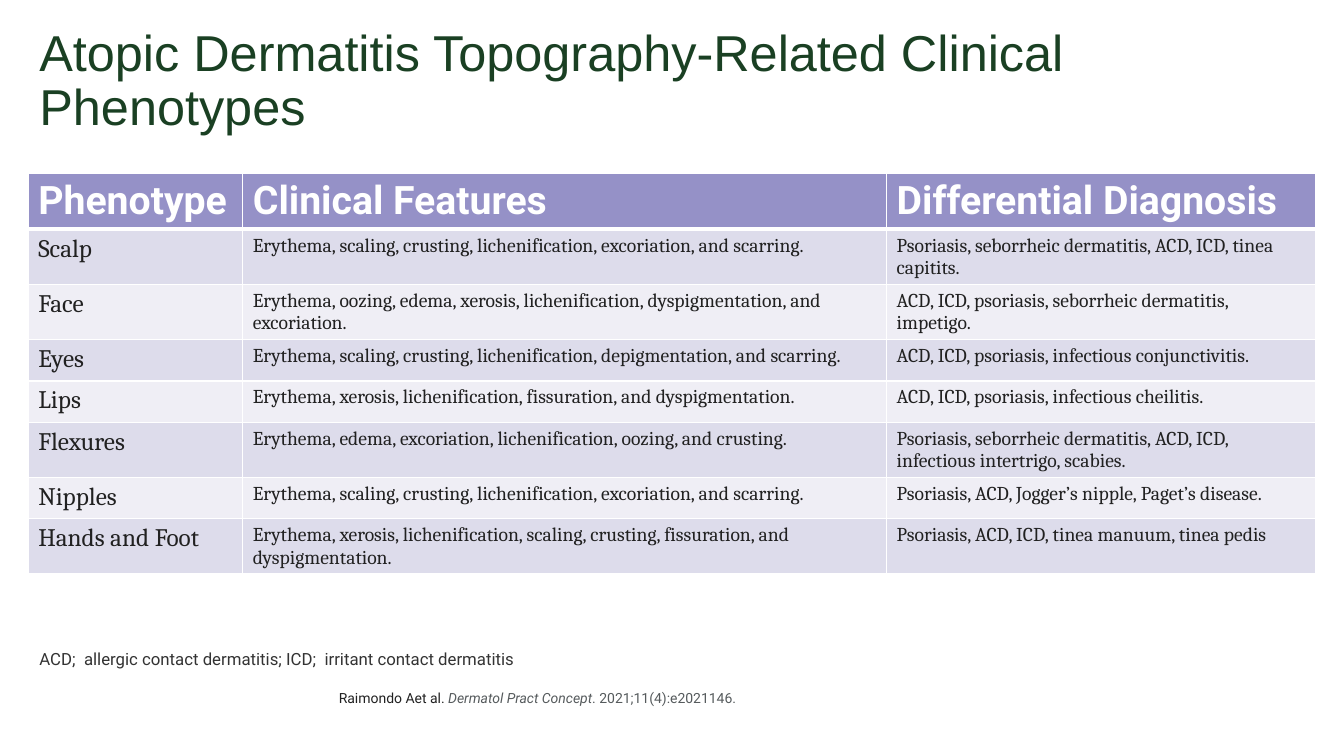
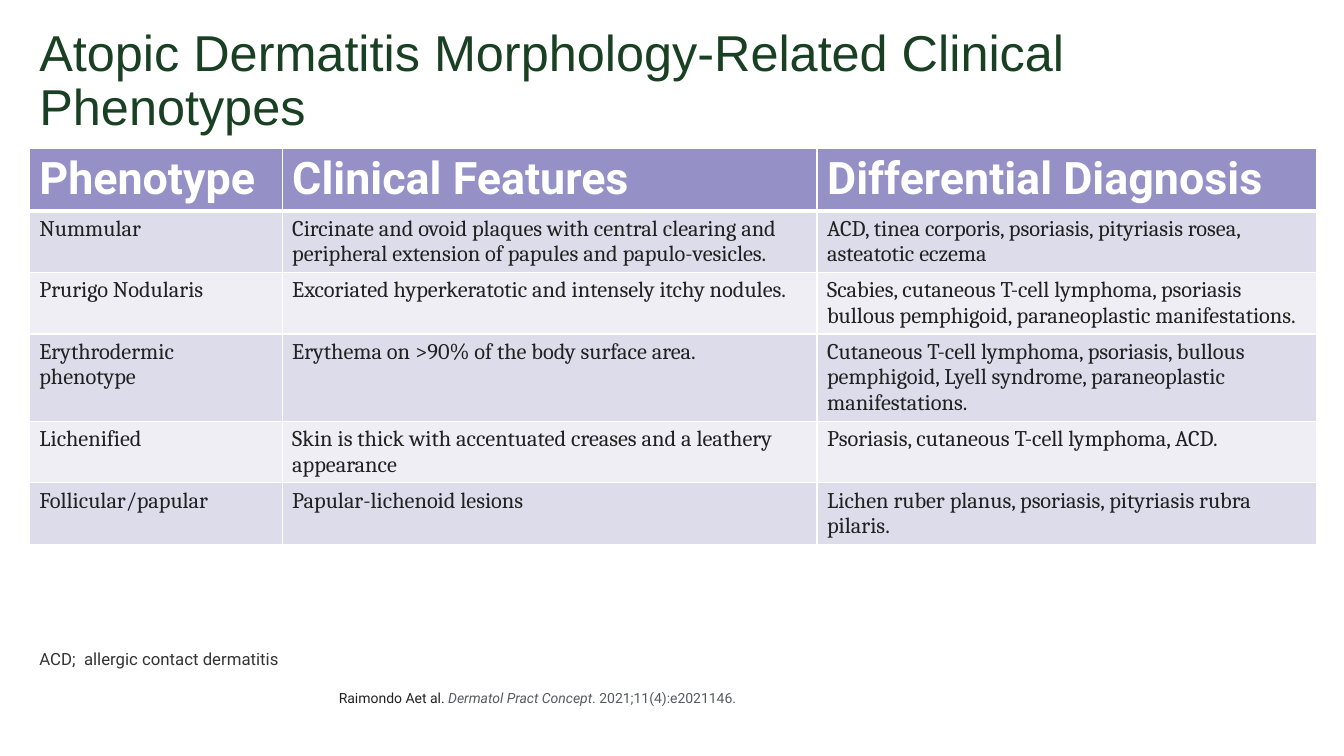
from collections import namedtuple

from lxml.etree import SubElement
from pptx import Presentation
from pptx.dml.color import RGBColor
from pptx.enum.text import MSO_ANCHOR as Anchor, MSO_AUTO_SIZE as AutoSize, PP_ALIGN as Align
from pptx.oxml.ns import qn
from pptx.util import Inches, Pt

COLORS = {
    "title": "1A4023", "ink": "212121", "note": "333333", "journal": "565B5D",
    "header": "9591C7", "band_dark": "DDDCEB", "band_light": "EFEEF5", "white": "FFFFFF",
}
Box = namedtuple("Box", "left top width height")

# Shared places, in percent of the slide's width and height
TITLE_BOX = Box(2.18, 2.53, 95.87, 16.67)
NOTE_BOX = Box(2.18, 84.13, 95.87, 5.07)
CITATION_BOX = Box(24.46, 90.8, 73.5, 8.4)
ROW_HEIGHT = Inches(0.41)

HEADINGS = ("Phenotype", "Clinical Features", "Differential Diagnosis")
CITATION = (
    ("Raimondo Aet al. ", "ink", False),
    ("Dermatol Pract Concept", "journal", True),
    (". 2021;11(4):e2021146.", "journal", False),
)

SLIDES = [
    {
        "title": "Atopic Dermatitis Topography-Related Clinical Phenotypes",
        "note": "ACD;  allergic contact dermatitis; ICD;  irritant contact dermatitis",
        "box": Box(2.1, 22.93, 95.8, 54),
        "weights": (1, 3, 2),
        "sizes": {"header": 28, "name": 18, "detail": 14},
        "rows": [
            ("Scalp",
             "Erythema, scaling, crusting, lichenification, excoriation, and scarring.",
             "Psoriasis, seborrheic dermatitis, ACD, ICD, tinea capitits."),
            ("Face",
             "Erythema, oozing, edema, xerosis, lichenification, dyspigmentation, and excoriation.",
             "ACD, ICD, psoriasis, seborrheic dermatitis, impetigo."),
            ("Eyes",
             "Erythema, scaling, crusting, lichenification, depigmentation, and scarring.",
             "ACD, ICD, psoriasis, infectious conjunctivitis."),
            ("Lips",
             "Erythema, xerosis, lichenification, fissuration, and dyspigmentation.",
             "ACD, ICD, psoriasis, infectious cheilitis."),
            ("Flexures",
             "Erythema, edema, excoriation, lichenification, oozing, and crusting.",
             "Psoriasis, seborrheic dermatitis, ACD, ICD, infectious intertrigo, scabies."),
            ("Nipples",
             "Erythema, scaling, crusting, lichenification, excoriation, and scarring.",
             "Psoriasis, ACD, Jogger’s nipple, Paget’s disease."),
            ("Hands and Foot",
             "Erythema, xerosis, lichenification, scaling, crusting, fissuration, and dyspigmentation.",
             "Psoriasis, ACD, ICD, tinea manuum, tinea pedis"),
        ],
    },
    {
        "title": "Atopic Dermatitis Morphology-Related Clinical Phenotypes",
        "note": "ACD;  allergic contact dermatitis",
        "box": Box(2.18, 19.6, 95.8, 57.7),
        "weights": (2.51, 5.31, 4.96),
        "sizes": {"header": 32, "name": 16, "detail": 16},
        "rows": [
            ("Nummular",
             "Circinate and ovoid plaques with central clearing and peripheral extension of "
             "papules and papulo-vesicles.",
             "ACD, tinea corporis, psoriasis, pityriasis rosea, asteatotic eczema"),
            ("Prurigo Nodularis",
             "Excoriated hyperkeratotic and intensely itchy nodules.",
             "Scabies, cutaneous T-cell lymphoma, psoriasis bullous pemphigoid, "
             "paraneoplastic manifestations."),
            ("Erythrodermic phenotype",
             "Erythema on >90% of the body surface area.",
             "Cutaneous T-cell lymphoma, psoriasis, bullous pemphigoid, Lyell syndrome, "
             "paraneoplastic manifestations."),
            ("Lichenified",
             "Skin is thick with accentuated creases and a leathery appearance",
             "Psoriasis, cutaneous T-cell lymphoma, ACD."),
            ("Follicular/papular",
             "Papular-lichenoid lesions",
             "Lichen ruber planus, psoriasis, pityriasis rubra pilaris."),
        ],
    },
]


def rgb(name):
    return RGBColor.from_string(COLORS[name])


def to_emu(deck, box):
    """Turn percentages of the slide into lengths."""
    wide, high = deck.slide_width / 100, deck.slide_height / 100
    return Box(*(round(share * unit) for share, unit in zip(box, (wide, high, wide, high))))


def style(span, size, face, color, bold=False, italic=False):
    font = span.font
    font.size, font.name, font.bold, font.italic = Pt(size), face, bold, italic
    font.color.rgb = rgb(color)


def fill_placeholder(holder, box, spans, size, face, anchor):
    """Place a template placeholder and write (text, colour, italic) spans in it."""
    holder.left, holder.top, holder.width, holder.height = box
    frame = holder.text_frame
    frame.auto_size, frame.word_wrap = AutoSize.NONE, True
    frame.vertical_anchor = anchor
    para = frame.paragraphs[0]
    para.alignment, para.line_spacing, para.space_before = Align.LEFT, 0.9, Pt(0)
    props = para._p.get_or_add_pPr()
    props.set("marL", "0")
    props.set("indent", "0")
    SubElement(props, qn("a:buNone"))
    for text, color, italic in spans:
        span = para.add_run()
        span.text = text
        style(span, size, face, color, italic=italic)


def set_borders(cell, top, bottom):
    """Draw white cell borders; widths are in points."""
    props = cell._tc.get_or_add_tcPr()
    sides = (("a:lnL", 1), ("a:lnR", 1), ("a:lnT", top), ("a:lnB", bottom))
    for place, (side, width) in enumerate(sides):
        line = SubElement(props, qn(side), w=str(Pt(width)))
        SubElement(SubElement(line, qn("a:solidFill")), qn("a:srgbClr"), val=COLORS["white"])
        props.insert(place, line)


def add_phenotype_table(page, box, weights, sizes, rows):
    grid = [HEADINGS, *rows]
    table = page.shapes.add_table(len(grid), len(HEADINGS), *box).table
    table.horz_banding = False
    for column, weight in zip(table.columns, weights):
        column.width = round(box.width * weight / sum(weights))
    for r, texts in enumerate(grid):
        table.rows[r].height = ROW_HEIGHT
        header = r == 0
        band = "header" if header else ("band_light", "band_dark")[r % 2]
        for c, text in enumerate(texts):
            cell = table.cell(r, c)
            cell.text = text
            cell.fill.solid()
            cell.fill.fore_color.rgb = rgb(band)
            set_borders(cell, top=3 if r == 1 else 1, bottom=3 if header else 1)
            span = cell.text_frame.paragraphs[0].runs[0]
            if header:
                style(span, sizes["header"], "Roboto", "white", bold=True)
            else:
                style(span, sizes["detail" if c else "name"], "Cambria", "ink")


def add_phenotype_slide(deck, content):
    page = deck.slides.add_slide(deck.slide_layouts.get_by_name("Two Content"))
    title, citation, note = page.placeholders
    fill_placeholder(title, to_emu(deck, TITLE_BOX), [(content["title"], "title", False)],
                     36, "Arial", Anchor.MIDDLE)
    add_phenotype_table(page, to_emu(deck, content["box"]), content["weights"],
                        content["sizes"], content["rows"])
    fill_placeholder(citation, to_emu(deck, CITATION_BOX), CITATION, 10, "Roboto", Anchor.TOP)
    fill_placeholder(note, to_emu(deck, NOTE_BOX), [(content["note"], "note", False)],
                     12, "Roboto", Anchor.BOTTOM)


def main():
    deck = Presentation()
    deck.slide_width, deck.slide_height = Inches(13.33), Inches(7.5)
    for content in SLIDES:
        add_phenotype_slide(deck, content)
    deck.save("out.pptx")


if __name__ == "__main__":
    main()
